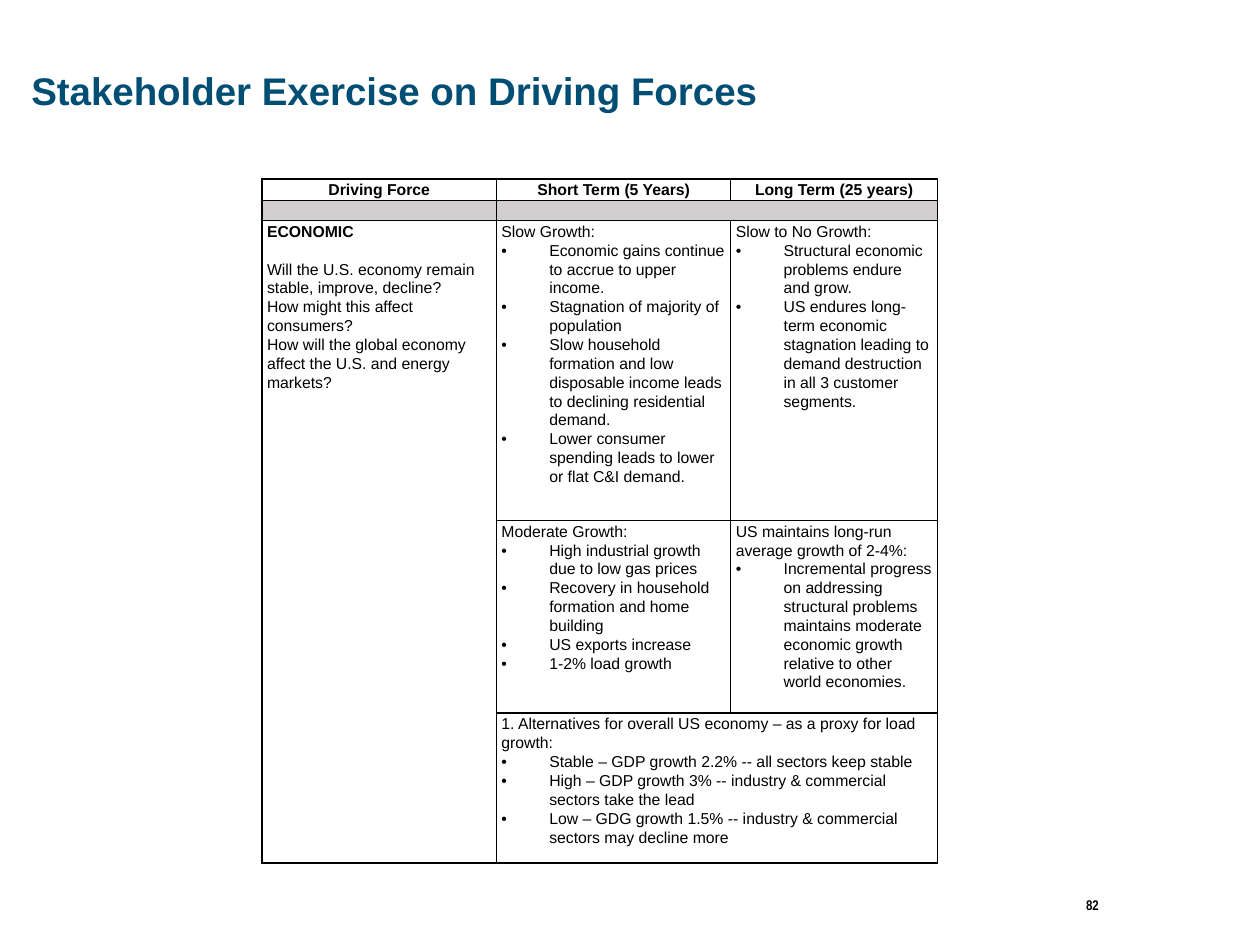
import dataclasses

import lxml.etree
import pptx
import pptx.dml.color
import pptx.enum.text
import pptx.oxml.ns
import pptx.util

Align = pptx.enum.text.PP_ALIGN
Anchor = pptx.enum.text.MSO_ANCHOR


@dataclasses.dataclass(frozen=True)
class Theme:
    width: float = 10
    height: float = 7.5
    title_color: str = "004E74"
    ink: str = "000000"
    paper: str = "FFFFFF"
    band: str = "D0CECE"
    font: str = "Arial"
    number_font: str = "Arial Narrow"
    title_size: int = 22
    table_size: int = 9
    number_size: int = 8
    border: int = 1


@dataclasses.dataclass(frozen=True)
class Label:
    text: str
    area: tuple  # left, top, width, height in percent of the slide
    font: str
    size: int
    color: str
    align: Align = Align.LEFT
    anchor: Anchor = Anchor.TOP
    spacing: float = 1.0


@dataclasses.dataclass(frozen=True)
class Entry:
    row: int
    column: int
    lines: tuple = ()
    bullets: tuple = ()
    heading: str = ""
    tab: float = 0.25
    centered: bool = False
    space_after: float = 0


THEME = Theme()

# Table grid, in percent of the slide's width and height
LEFT, TOP = 20.8, 18.93
COLUMNS = (18.6, 18.6, 16.4)
ROWS = (2.27, 2, 31.73, 20.4, 15.87)
BAND_ROW = 1
MERGES = (((1, 1), (1, 2)), ((2, 0), (4, 0)), ((4, 1), (4, 2)))

LABELS = (
    Label("Stakeholder Exercise on Driving Forces", (1.5, 2.53, 63.2, 14.67),
          THEME.font, THEME.title_size, THEME.title_color,
          anchor=Anchor.MIDDLE, spacing=0.85),
    Label("82", (72.9, 94.27, 15.3, 5.73), THEME.number_font,
          THEME.number_size, THEME.ink, align=Align.RIGHT),
)

HEADERS = ("Driving Force", "Short Term (5 Years)", "Long Term (25 years)")
ENTRIES = (
    *(Entry(0, column, heading=text, centered=True)
      for column, text in enumerate(HEADERS)),
    Entry(2, 0, heading="ECONOMIC", space_after=10.8, lines=(
        "Will the U.S. economy remain stable, improve, decline?",
        "How might this affect consumers?",
        "How will the global economy affect the U.S. and energy markets?")),
    Entry(2, 1, ("Slow Growth:",), (
        "Economic gains continue to accrue to upper income.",
        "Stagnation of majority of population",
        "Slow household formation and low disposable income leads to "
        "declining residential demand.",
        "Lower consumer spending leads to lower or flat C&I demand."), tab=0.5),
    Entry(2, 2, ("Slow to No Growth:",), (
        "Structural economic problems endure and grow.",
        "US endures long-term economic stagnation leading to demand "
        "destruction in all 3 customer segments.")),
    Entry(3, 1, ("Moderate Growth:",), (
        "High industrial growth due to low gas prices",
        "Recovery in household formation and home building",
        "US exports increase",
        "1-2% load growth")),
    Entry(3, 2, ("US maintains long-run average growth of 2-4%:",), (
        "Incremental progress on addressing structural problems maintains "
        "moderate economic growth relative to other world economies.",)),
    Entry(4, 1, ("1. Alternatives for overall US economy – as a proxy for load growth:",), (
        "Stable – GDP growth 2.2% -- all sectors keep stable",
        "High – GDP growth 3% -- industry & commercial sectors take the lead",
        "Low – GDG growth 1.5% -- industry & commercial sectors may decline more")),
)


def across(share: float) -> int:
    return pptx.util.Inches(THEME.width * share / 100)


def down(share: float) -> int:
    return pptx.util.Inches(THEME.height * share / 100)


def apply(target, values: dict) -> None:
    for name, value in values.items():
        setattr(target, name, value)


def add_element(parent, tag: str, **attributes):
    element = lxml.etree.SubElement(parent, pptx.oxml.ns.qn(tag))
    for name, value in attributes.items():
        element.set(name, str(value))
    return element


def add_span(para, text: str, font: str, size: int, color: str, bold: bool) -> None:
    span = para.add_run()
    span.text = text
    apply(span.font, {"name": font, "size": pptx.util.Pt(size), "bold": bold})
    span.font.color.rgb = pptx.dml.color.RGBColor.from_string(color)


def add_label(page, label: Label) -> None:
    left, top, width, height = label.area
    box = page.shapes.add_textbox(across(left), down(top), across(width), down(height))
    apply(box.text_frame, {"word_wrap": True, "vertical_anchor": label.anchor})
    para = box.text_frame.paragraphs[0]
    apply(para, {"alignment": label.align, "line_spacing": label.spacing})
    add_span(para, label.text, label.font, label.size, label.color, True)


def style_cell(cell, fill: str) -> None:
    inch = pptx.util.Inches
    apply(cell, {"margin_left": inch(0.04), "margin_right": inch(0.04),
                 "margin_top": inch(0.01), "margin_bottom": 0})
    properties = cell._tc.get_or_add_tcPr()
    for side in ("a:lnL", "a:lnR", "a:lnT", "a:lnB"):
        line = add_element(properties, side, w=pptx.util.Pt(THEME.border))
        add_element(add_element(line, "a:solidFill"), "a:srgbClr", val=THEME.ink)
    cell.fill.solid()
    cell.fill.fore_color.rgb = pptx.dml.color.RGBColor.from_string(fill)
    # Keep empty cells as low as their rows
    add_element(cell.text_frame.paragraphs[0]._p, "a:endParaRPr",
                sz=THEME.table_size * 100)


def add_bullet(para, tab: float) -> None:
    indent = pptx.util.Inches(0.38)
    properties = para._p.get_or_add_pPr()
    apply_indent = {"marL": indent, "indent": -indent}
    for name, value in apply_indent.items():
        properties.set(name, str(value))
    add_element(properties, "a:buFont", typeface=THEME.font)
    add_element(properties, "a:buChar", char="•")
    tabs = add_element(properties, "a:tabLst")
    add_element(tabs, "a:tab", pos=pptx.util.Inches(tab), algn="l")


def fill_entry(table, entry: Entry) -> None:
    frame = table.cell(entry.row, entry.column).text_frame
    headings = (entry.heading,) if entry.heading else ()
    texts = headings + entry.lines + entry.bullets
    first_bullet = len(headings + entry.lines)
    for index, text in enumerate(texts):
        para = frame.add_paragraph() if index else frame.paragraphs[0]
        bold = index < len(headings)
        apply(para, {"line_spacing": 1.07,
                     "alignment": Align.CENTER if entry.centered else Align.LEFT})
        if bold and entry.space_after:
            para.space_after = pptx.util.Pt(entry.space_after)
        if index >= first_bullet:
            add_bullet(para, entry.tab)
        add_span(para, text, THEME.font, THEME.table_size, THEME.ink, bold)


def add_forces_table(page) -> None:
    table = page.shapes.add_table(
        len(ROWS), len(COLUMNS), across(LEFT), down(TOP),
        across(sum(COLUMNS)), down(sum(ROWS))).table
    apply(table, {"first_row": False, "horz_banding": False})
    for column, share in zip(table.columns, COLUMNS):
        column.width = across(share)
    for index, (row, share) in enumerate(zip(table.rows, ROWS)):
        row.height = down(share)
        for cell in row.cells:
            style_cell(cell, THEME.band if index == BAND_ROW else THEME.paper)
    for start, end in MERGES:
        table.cell(*start).merge(table.cell(*end))
    for entry in ENTRIES:
        fill_entry(table, entry)


def main() -> None:
    deck = pptx.Presentation()
    apply(deck, {"slide_width": across(100), "slide_height": down(100)})
    page = deck.slides.add_slide(deck.slide_layouts[6])
    # Title and page number, then the table
    for label in LABELS:
        add_label(page, label)
    add_forces_table(page)
    deck.save("out.pptx")


if __name__ == "__main__":
    main()
